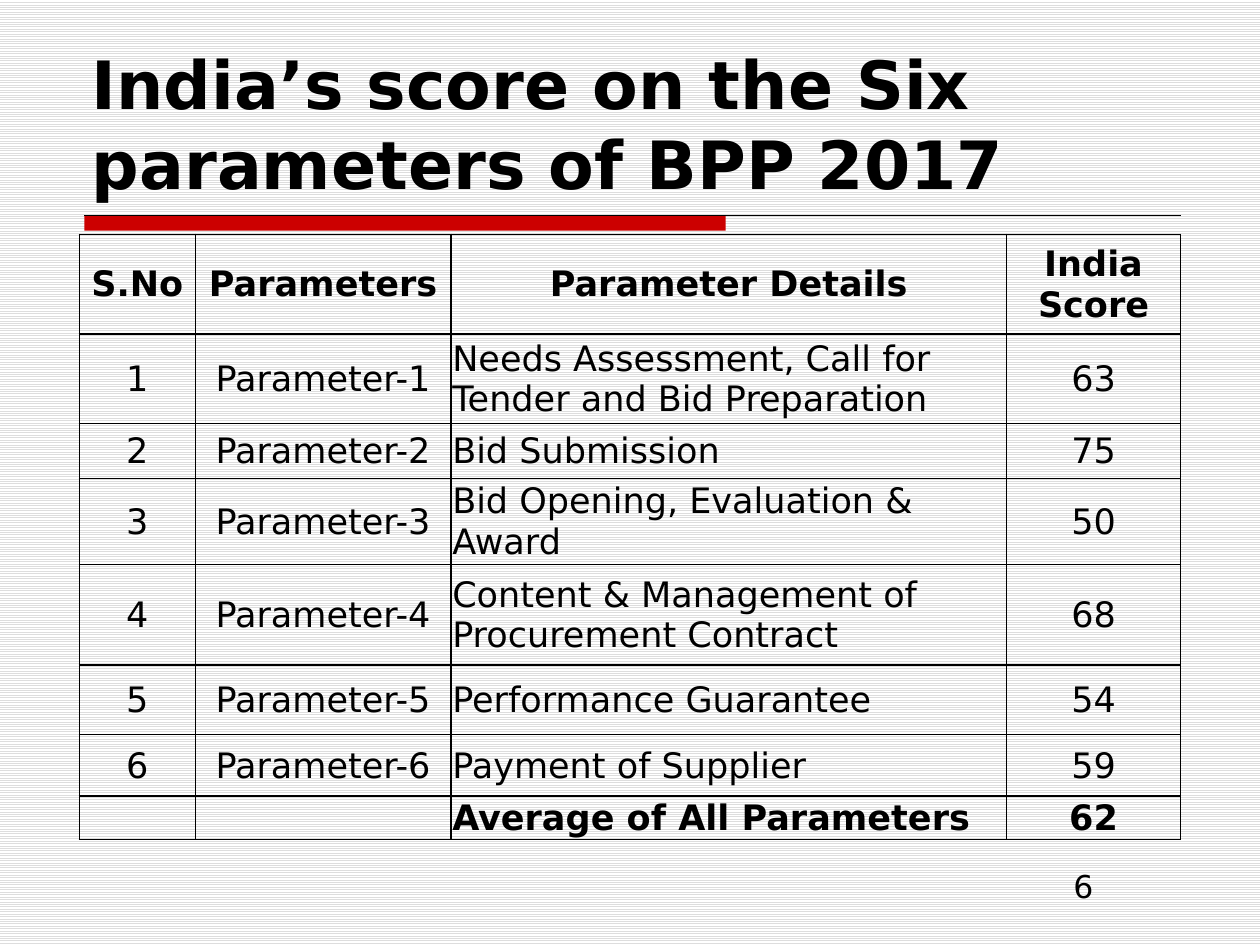
from lxml import etree
from pptx import Presentation
from pptx import util as u
from pptx.dml.color import RGBColor
from pptx.enum import dml, shapes, text
from pptx.oxml.ns import qn

THEME = {
    "font": "DejaVu Sans",
    "ink": RGBColor(0, 0, 0),
    "accent": RGBColor(0xCC, 0, 0),
    "stripe": RGBColor(0xDD, 0xDD, 0xDD),
    "paper": RGBColor(255, 255, 255),
    "title": u.Pt(38),
    "body": u.Pt(20),
    "number": u.Pt(18),
}
LEFT, CENTER = text.PP_ALIGN.LEFT, text.PP_ALIGN.CENTER


def write(tf, content, size, bold=False, align=LEFT):
    tf.word_wrap = True
    for i, line in enumerate(content.split("\n")):
        p = tf.paragraphs[0] if i == 0 else tf.add_paragraph()
        p.alignment = align
        r = p.add_run()
        r.text = line
        r.font.color.rgb = THEME["ink"]
        font = {"name": THEME["font"], "size": THEME[size], "bold": bold}
        for key, value in font.items():
            setattr(r.font, key, value)


def add_borders(cell):
    tc_pr = cell._tc.get_or_add_tcPr()
    for i, side in enumerate(("lnL", "lnR", "lnT", "lnB")):
        ln = etree.Element(qn(f"a:{side}"), w=str(u.Pt(1)))
        fill = etree.SubElement(ln, qn("a:solidFill"))
        etree.SubElement(fill, qn("a:srgbClr"), val=str(THEME["ink"]))
        tc_pr.insert(i, ln)


prs = Presentation()
prs.slide_width, prs.slide_height = u.Inches(10), u.Inches(7.5)
s = prs.slides.add_slide(prs.slide_layouts[6])

bg = s.background.fill
bg.patterned()
bg.pattern = dml.MSO_PATTERN.LIGHT_HORIZONTAL
bg.fore_color.rgb = THEME["stripe"]
bg.back_color.rgb = THEME["paper"]

bar = s.shapes.add_shape(shapes.MSO_SHAPE.RECTANGLE, u.Inches(0.67),
                         u.Inches(1.71), u.Inches(5.09), u.Inches(0.12))
bar.shadow.inherit = False
bar.fill.solid()
bar.fill.fore_color.rgb = THEME["accent"]
bar.line.fill.background()

rule = s.shapes.add_connector(shapes.MSO_CONNECTOR.STRAIGHT, u.Inches(0.67),
                              u.Inches(1.71), u.Inches(9.37), u.Inches(1.71))
rule.line.color.rgb = THEME["ink"]
rule.line.width = u.Pt(0.75)
etree.SubElement(rule._element.spPr, qn("a:effectLst"))

number = s.shapes.add_textbox(u.Inches(8.42), u.Inches(6.83),
                              u.Inches(0.83), u.Inches(0.4))
write(number.text_frame, "6", "number")

details = [
    ("Needs Assessment, Call for Tender and Bid Preparation", 63),
    ("Bid Submission", 75),
    ("Bid Opening, Evaluation & Award", 50),
    ("Content & Management of Procurement Contract", 68),
    ("Performance Guarantee", 54),
    ("Payment of Supplier", 59),
]
rows = [("S.No", "Parameters", "Parameter Details", "India\nScore")]
rows += [(str(i), f"Parameter-{i}", detail, str(score))
         for i, (detail, score) in enumerate(details, 1)]
rows.append(("", "", "Average of All Parameters", "62"))
widths = [0.92, 2.03, 4.41, 1.38]
heights = [0.79, 0.71, 0.44, 0.68, 0.8, 0.55, 0.49, 0.34]

table = s.shapes.add_table(len(rows), len(widths), u.Inches(0.63), u.Inches(1.86),
                           u.Inches(sum(widths)), u.Inches(sum(heights))).table
table.first_row = table.horz_banding = False
for column, width in zip(table.columns, widths):
    column.width = u.Inches(width)
for row, height in zip(table.rows, heights):
    row.height = u.Inches(height)

cell_format = {
    "vertical_anchor": text.MSO_ANCHOR.MIDDLE,
    "margin_left": u.Inches(0.01),
    "margin_right": u.Inches(0.01),
    "margin_top": u.Inches(0.01),
    "margin_bottom": 0,
}
for i, row in enumerate(rows):
    for j, content in enumerate(row):
        cell = table.cell(i, j)
        for key, value in cell_format.items():
            setattr(cell, key, value)
        cell.fill.background()
        add_borders(cell)
        if content:
            write(cell.text_frame, content, "body", i in (0, len(rows) - 1),
                  LEFT if j == 2 and i > 0 else CENTER)

title = s.shapes.add_textbox(u.Inches(0.63), u.Inches(0.33),
                             u.Inches(8.75), u.Inches(1.33))
title.text_frame.vertical_anchor = text.MSO_ANCHOR.BOTTOM
write(title.text_frame, "India’s score on the Six parameters of BPP 2017", "title", True)

prs.save("out.pptx")
